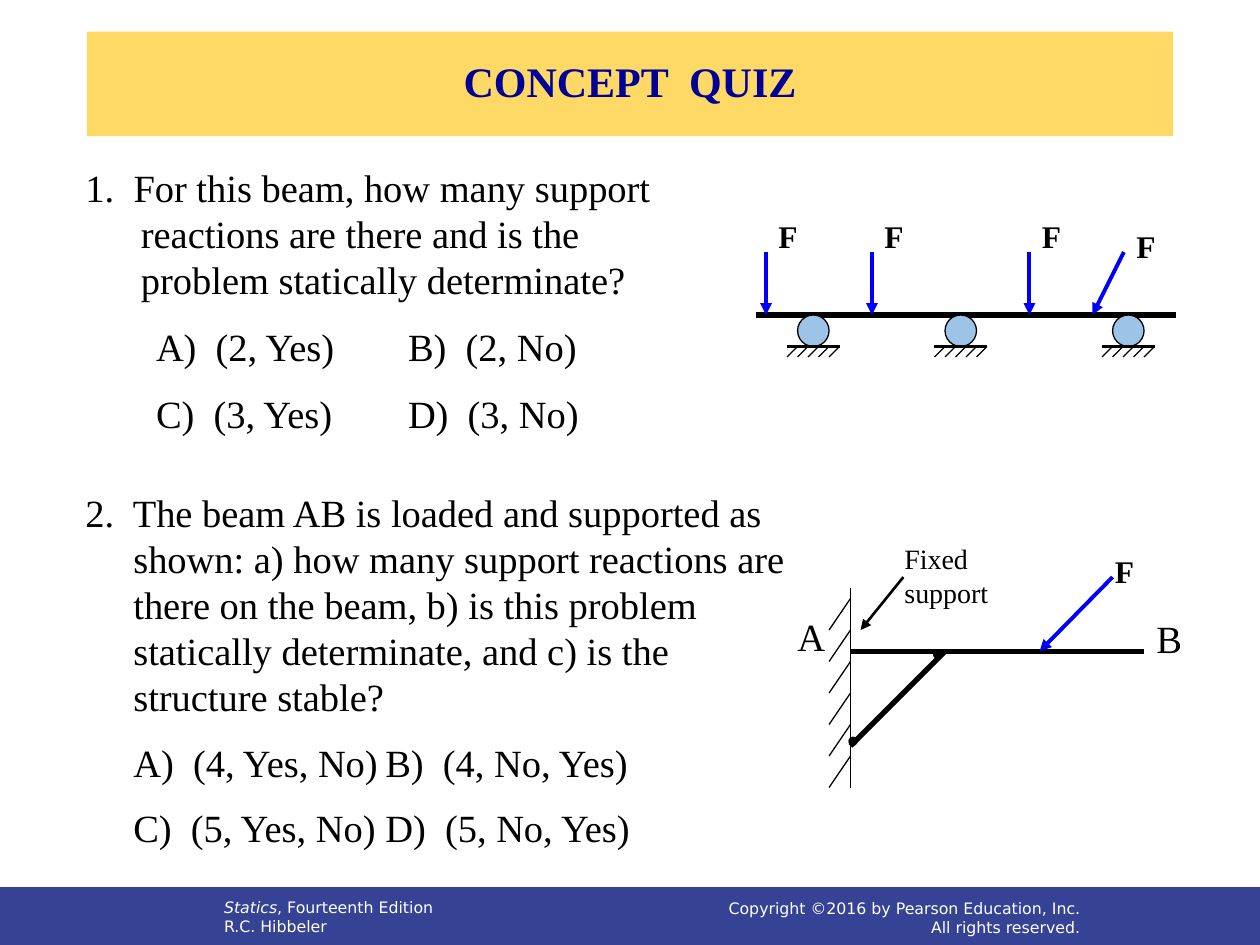
from dataclasses import dataclass
from lxml.etree import SubElement as Sub
from pptx import Presentation as Deck
from pptx.dml.color import RGBColor as Rgb
from pptx.enum.shapes import MSO_CONNECTOR as Conn, MSO_SHAPE as Form
from pptx.enum.text import MSO_ANCHOR as Anchor, PP_ALIGN as Align
from pptx.oxml.ns import qn
from pptx.util import Inches, Pt


@dataclass(frozen=True)
class Theme:
    """Colours, fonts and type sizes of the slide."""
    ink: str = "000000"
    white: str = "FFFFFF"
    navy: str = "000096"
    gold: str = "FFD966"
    band: str = "364395"
    force: str = "0000FA"
    ball: str = "9DC3E6"
    serif: str = "Times New Roman"
    sans: str = "DejaVu Sans"
    head: int = 24
    body: int = 22
    mark: int = 18
    note: int = 16
    foot: int = 9


T = Theme()
STEP = 1 / 12


def add_run(para, text, size, color=T.ink, face=T.serif, bold=False, slant=False):
    """Add one styled run to a paragraph."""
    run = para.add_run()
    run.text = text
    font = run.font
    font.name, font.size = face, Pt(size)
    font.bold, font.italic = bold, slant
    font.color.rgb = Rgb.from_string(color)


def add_box(slide, x, y, w, h, wrap=True):
    """Add an empty text box and return its text frame."""
    frame = slide.shapes.add_textbox(Inches(x), Inches(y), Inches(w), Inches(h)).text_frame
    frame.word_wrap = wrap
    return frame


def add_label(slide, text, x, y, w, h, size=T.body, bold=False, wrap=False):
    """Add a short label to a figure."""
    frame = add_box(slide, x, y, w, h, wrap)
    add_run(frame.paragraphs[0], text, size, bold=bold)


def add_shape(slide, form, x, y, w, h, fill, edge, width):
    """Add a filled shape without a shadow."""
    shape = slide.shapes.add_shape(form, Inches(x), Inches(y), Inches(w), Inches(h))
    shape.shadow.inherit = False
    shape.fill.solid()
    shape.fill.fore_color.rgb = Rgb.from_string(fill)
    shape.line.color.rgb = Rgb.from_string(edge)
    shape.line.width = Pt(width)


def add_line(slide, x1, y1, x2, y2, width=0.75, color=T.ink, arrow=False):
    """Add a straight line, with an arrowhead at its end if asked."""
    line = slide.shapes.add_connector(
        Conn.STRAIGHT, Inches(x1), Inches(y1), Inches(x2), Inches(y2))
    line.line.color.rgb = Rgb.from_string(color)
    line.line.width = Pt(width)
    props = line._element.spPr
    if arrow:
        Sub(props.find(qn("a:ln")), qn("a:tailEnd"), type="triangle")
    Sub(props, qn("a:effectLst"))


def add_quiz(slide, place, ask, picks, left, hang, pick_left, pick_hang, gap):
    """Add a question with its rows of answers."""
    frame = add_box(slide, *place)
    for i, text in enumerate([ask, *picks]):
        para = frame.paragraphs[0] if i == 0 else frame.add_paragraph()
        props = para._p.get_or_add_pPr()
        props.set("marL", str(Inches(pick_left if i else left)))
        props.set("indent", str(-Inches(pick_hang if i else hang)))
        if i:
            para.space_before = Pt(gap)
        add_run(para, text, T.body)


def add_title(slide):
    """Format the title as a gold banner."""
    title = slide.shapes.title
    title.left, title.top = Inches(0.69), Inches(0.25)
    title.width, title.height = Inches(8.62), Inches(0.83)
    title.fill.solid()
    title.fill.fore_color.rgb = Rgb.from_string(T.gold)
    title.text_frame.vertical_anchor = Anchor.MIDDLE
    para = title.text_frame.paragraphs[0]
    para.alignment, para.line_spacing = Align.CENTER, 0.9
    add_run(para, "CONCEPT  QUIZ", T.head, T.navy, bold=True)


def add_foot(slide):
    """Add the footer band with its two notes."""
    add_shape(slide, Form.RECTANGLE, -0.01, 7.04, 10.02, 0.47, T.band, T.band, 0.5)
    style = (T.foot, T.white, T.sans)
    book = add_box(slide, 1.68, 7.08, 2.9, 0.4)
    add_run(book.paragraphs[0], "Statics", *style, slant=True)
    add_run(book.paragraphs[0], ", Fourteenth Edition", *style)
    add_run(book.add_paragraph(), "R.C. Hibbeler", *style)
    rights = add_box(slide, 4.67, 7.07, 4, 0.43)
    rights.vertical_anchor = Anchor.MIDDLE
    rows = [rights.paragraphs[0], rights.add_paragraph()]
    texts = ["Copyright ©2016 by Pearson Education, Inc.", "All rights reserved."]
    for para, text in zip(rows, texts):
        para.alignment = Align.RIGHT
        add_run(para, text, *style)


def add_roller(slide, x):
    """Add a roller on hatched ground."""
    add_shape(slide, Form.OVAL, x, 2.5, 0.25, 0.25, T.ball, T.ink, 0.75)
    add_line(slide, x - STEP, 2.75, x + 4 * STEP, 2.75, 2.25)
    for i in range(5):
        add_line(slide, x + i * STEP, 2.75, x + (i - 1) * STEP, 2.75 + STEP)


def add_beam(slide):
    """Draw the beam on three rollers with its loads."""
    add_line(slide, 6, 2.5, 9.33, 2.5, 3)
    for x in (6.33, 7.5, 8.83):
        add_roller(slide, x)
    for x, lean, top in ((6.08, 0, 1.67), (6.92, 0, 1.67), (8.17, 0, 1.67), (8.92, 0.25, 1.75)):
        add_line(slide, x, 2, x - lean, 2.5, 2.25, T.force, True)
        add_label(slide, "F", x, top, 0.33, 0.4, T.mark, True, True)


def add_frame(slide):
    """Draw the braced beam AB fixed to a wall."""
    add_line(slide, 6.75, 4.67, 6.75, 6.25)
    for i in range(6):
        y = 4.75 + i * 0.25
        add_line(slide, 6.75, y, 6.58, y + 0.25)
    add_line(slide, 6.75, 5.17, 9.08, 5.17, 3)
    add_line(slide, 7.5, 5.17, 6.75, 5.92, 3)
    add_line(slide, 8.83, 4.58, 8.25, 5.17, 2.25, T.force, True)
    add_line(slide, 7.17, 4.58, 6.83, 5, 1.5, arrow=True)
    add_label(slide, "F", 8.75, 4.33, 0.42, 0.4, T.mark, True, True)
    add_label(slide, "Fixed support", 7.08, 4.25, 1, 0.64, T.note, wrap=True)
    add_label(slide, "A", 6.23, 4.82, 0.42, 0.47)
    add_label(slide, "B", 9.08, 4.83, 0.4, 0.47)
    for x, y in ((7.29, 4.94), (6.62, 5.63)):
        add_label(slide, "•", x, y, 0.34, 0.47)


def main():
    """Build and save the slide."""
    deck = Deck()
    deck.slide_width, deck.slide_height = Inches(10), Inches(7.5)
    slide = deck.slides.add_slide(deck.slide_layouts[5])
    add_title(slide)
    add_foot(slide)
    add_quiz(slide, (0.58, 1.25, 5.08, 2.29),
             "1.  For this beam, how many support reactions are there and is the "
             "problem statically determinate?",
             ["A)  (2, Yes)\t\tB)  (2, No)", "C)  (3, Yes)\t\tD)  (3, No)"],
             0.44, 0.44, 1.06, 0.5, 12)
    add_quiz(slide, (0.58, 3.83, 5.75, 3.03),
             "2.  The beam AB is loaded and supported as shown: a) how many support "
             "reactions are there on the beam, b) is this problem statically "
             "determinate, and c) is the structure stable?",
             ["\tA)  (4, Yes, No)\tB)  (4, No, Yes)", "\tC)  (5, Yes, No)\tD)  (5, No, Yes)"],
             0.38, 0.38, 0.38, 0.38, 11)
    add_beam(slide)
    add_frame(slide)
    deck.save("out.pptx")


if __name__ == "__main__":
    main()
